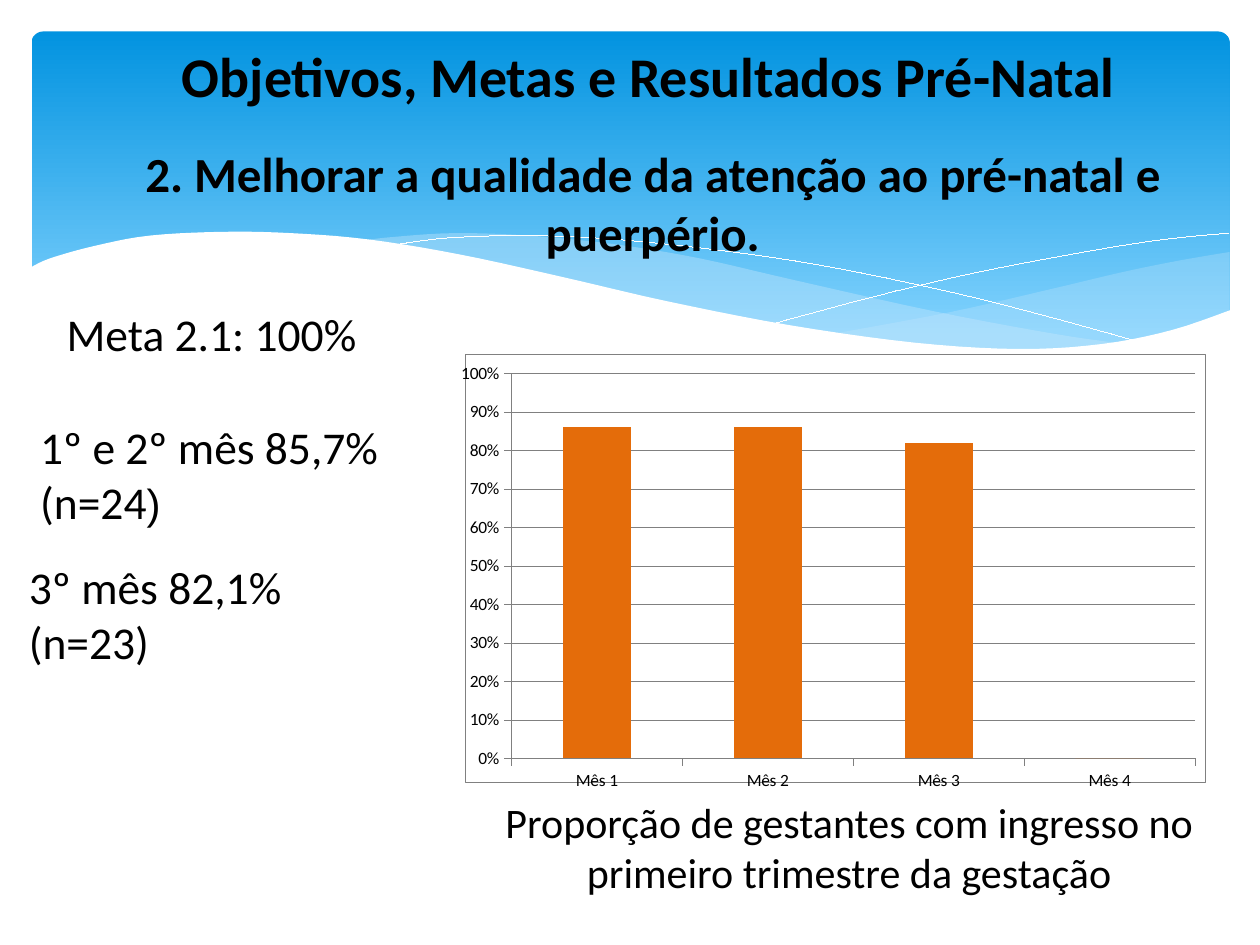
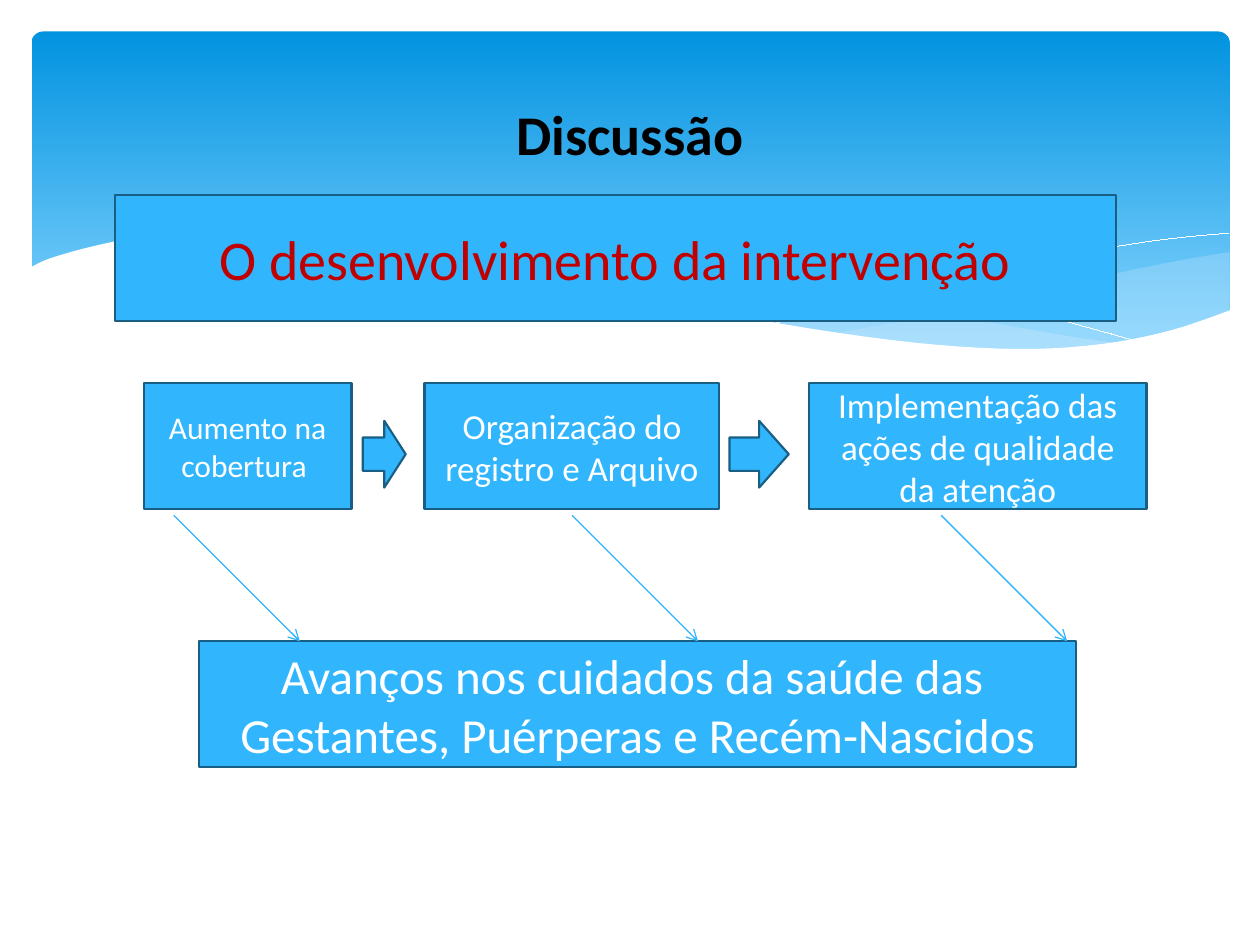
"""Build two slides on prenatal care results and their discussion."""
from dataclasses import dataclass

from lxml import etree
from pptx import Presentation
from pptx.chart.data import CategoryChartData
from pptx.dml.color import RGBColor as RGB
from pptx.enum.chart import XL_CHART_TYPE as CT, XL_TICK_MARK as TICK
from pptx.enum.shapes import MSO_CONNECTOR as CONN, MSO_SHAPE as SHAPE
from pptx.enum.text import MSO_ANCHOR as ANCHOR, MSO_AUTO_SIZE as AUTO, PP_ALIGN as ALIGN
from pptx.oxml import parse_xml
from pptx.oxml.ns import nsdecls, qn
from pptx.util import Inches, Pt


@dataclass(frozen=True)
class Theme:
    """Colours, fonts and type sizes of the deck."""
    font: str = "Calibri"
    alt_font: str = "Arial"
    black: str = "000000"
    white: str = "FFFFFF"
    red: str = "C00000"
    band_top: str = "0293E0"
    band_bottom: str = "83D3FE"
    wave: str = "C6E7FC"
    box: str = "31B6FD"
    box_line: str = "195F84"
    bar: str = "E46C0A"
    grid: str = "808080"
    title: int = 32
    subtitle: int = 28
    body: int = 26
    caption: int = 24
    step: int = 20
    small_step: int = 18
    axis: int = 10
    hairline: float = 0.01


T = Theme()

RIGHT_WAVE_TOP = [(9.76, 2), (9.35, 2.07), (8.91, 2.16), (8.32, 2.3), (7.53, 2.48), (6.61, 2.65)]
RIGHT_WAVE_BOTTOM = [(6.61, 2.65), (7.19, 2.72), (7.69, 2.77), (8.14, 2.78), (8.63, 2.75),
                     (9.05, 2.69), (9.42, 2.59), (9.76, 2.47)]
LONG_WAVE_TOP = [(8.93, 2.73), (8.37, 2.65), (7.41, 2.47), (6.29, 2.22), (5.55, 2.05),
                 (4.89, 1.94), (4.2, 1.87), (3.61, 1.85), (3.13, 1.88), (2.86, 1.91)]
LONG_WAVE_BOTTOM = [(2.86, 1.91), (3.62, 2.03), (4.49, 2.22), (5.3, 2.4), (6.18, 2.58),
                    (6.95, 2.7), (7.61, 2.77), (8.18, 2.78), (8.57, 2.77), (8.93, 2.73)]
FALLING_LINE = [(3.09, 1.95), (3.53, 1.89), (4.16, 1.87), (4.89, 1.9), (5.82, 2),
                (6.65, 2.13), (7.6, 2.33), (8.31, 2.51), (9.07, 2.72)]
RISING_LINE = [(6.13, 2.57), (6.95, 2.35), (7.76, 2.16), (8.66, 1.99), (9.24, 1.9), (9.75, 1.85)]
PAGE_EDGE = [(9.77, 2.46), (9.3, 2.62), (8.75, 2.73), (8.09, 2.77), (7.26, 2.72), (6.26, 2.58),
             (5.29, 2.39), (4.47, 2.2), (3.65, 2.02), (2.92, 1.9), (2.3, 1.85), (1.77, 1.84),
             (1.19, 1.87), (0.76, 1.95), (0.4, 2.05), (0.23, 2.13)]
PAGE_CORNERS = [(0.23, 3.29), (9.77, 3.29)]


def rgb(code):
    """Turn a hex code into a colour."""
    return RGB.from_string(code)


def inches(*values):
    """Convert several lengths to EMU."""
    return [Inches(v) for v in values]


def smooth(points, steps=5):
    """Return a Catmull-Rom curve through the points."""
    padded = [points[0], *points, points[-1]]
    curve = [points[0]]
    for a, b, c, d in zip(padded, padded[1:], padded[2:], padded[3:]):
        for i in range(1, steps + 1):
            t = i / steps
            curve.append(tuple(
                (2 * q + (r - p) * t + (2 * p - 5 * q + 4 * r - s) * t ** 2
                 + (3 * q - p - 3 * r + s) * t ** 3) / 2
                for p, q, r, s in zip(a, b, c, d)))
    return curve


def paint(s, fill=None, line=None, width=T.hairline):
    """Set the fill and line of a shape and drop its shadow."""
    s.shadow.inherit = False
    if fill:
        s.fill.solid()
        s.fill.fore_color.rgb = rgb(fill)
    else:
        s.fill.background()
    if line:
        s.line.color.rgb = rgb(line)
        s.line.width = Pt(width)
    else:
        s.line.fill.background()


def add_outline(slide, points, fill=None, line=None, opacity=100):
    """Draw a closed filled outline, or an open line when there is no fill."""
    pts = [inches(*p) for p in points]
    builder = slide.shapes.build_freeform(*pts[0])
    builder.add_line_segments(pts[1:], close=bool(fill))
    s = builder.convert_to_shape()
    paint(s, fill, line)
    if opacity < 100:
        clr = s.element.spPr.find(f"{qn('a:solidFill')}/{qn('a:srgbClr')}")
        etree.SubElement(clr, qn("a:alpha"), val=str(opacity * 1000))
    return s


def add_band(slide):
    """Draw the gradient band at the top of the page."""
    s = slide.shapes.add_shape(SHAPE.ROUNDED_RECTANGLE, *inches(0.25, 0.25, 9.51, 2.7))
    s.adjustments[0] = 0.034
    paint(s)
    s.fill.gradient()
    s.fill.gradient_angle = 270
    for stop, color, pos in zip(s.fill.gradient_stops, (T.band_top, T.band_bottom), (0, 0.9)):
        stop.color.rgb = rgb(color)
        stop.position = pos
    return s


def decorate_layout(layout, slide):
    """Put the band and its waves behind everything on the layout."""
    for ph in list(layout.placeholders)[1:]:
        layout.shapes.element.remove(ph.element)
    parts = [
        add_band(slide),
        add_outline(slide, smooth(RIGHT_WAVE_TOP) + smooth(RIGHT_WAVE_BOTTOM), T.wave, opacity=29),
        add_outline(slide, smooth(LONG_WAVE_TOP) + smooth(LONG_WAVE_BOTTOM), T.wave, opacity=40),
        add_outline(slide, smooth(FALLING_LINE), line=T.white),
        add_outline(slide, smooth(RISING_LINE), line=T.white),
        add_outline(slide, smooth(PAGE_EDGE) + PAGE_CORNERS, T.white),
    ]
    for i, s in enumerate(parts, start=2):
        layout.shapes.element.insert(i, s.element)


def format_run(r, size, color=T.black, bold=False, font=T.font):
    """Set the font of a run."""
    r.font.name = font
    r.font.size = Pt(size)
    r.font.bold = bold
    r.font.color.rgb = rgb(color)


def write(s, text, size, color=T.black, bold=False, align=ALIGN.CENTER, anchor=ANCHOR.MIDDLE):
    """Fill a shape with one formatted paragraph and return the paragraph."""
    tf = s.text_frame
    p = tf.paragraphs[0]
    p.text = text
    p.alignment = align
    tf.word_wrap = True
    tf.auto_size = AUTO.NONE
    tf.vertical_anchor = anchor
    for r in p.runs:
        format_run(r, size, color, bold)
    return p


def set_title(slide, text, size, box):
    """Place and fill the title placeholder."""
    s = slide.shapes.title
    s.left, s.top, s.width, s.height = inches(*box)
    write(s, text, size, bold=True)


def add_text(slide, text, size, box, **style):
    """Add a text box and return its paragraph."""
    return write(slide.shapes.add_textbox(*inches(*box)), text, size, **style)


def add_box(slide, text, size, box, color=T.white):
    """Add a blue box with centred text."""
    s = slide.shapes.add_shape(SHAPE.RECTANGLE, *inches(*box))
    paint(s, T.box, T.box_line, 1.25)
    write(s, text, size, color)


def add_block_arrow(slide, left, width):
    """Add a block arrow between two steps."""
    s = slide.shapes.add_shape(SHAPE.RIGHT_ARROW, *inches(left, 3.34, width, 0.53))
    paint(s, T.box, T.box_line, 1.25)


def add_diagonal_arrow(slide, x, y, reach=1):
    """Add a thin arrow going down to the right."""
    s = slide.shapes.add_connector(CONN.STRAIGHT, *inches(x, y, x + reach, y + reach))
    s.line.color.rgb = rgb(T.box)
    s.line.width = Pt(0.75)
    props = s.element.spPr
    etree.SubElement(props.find(qn("a:ln")), qn("a:tailEnd"), type="arrow")
    etree.SubElement(props, qn("a:effectLst"))


def area_format(line=None):
    """Return chart area properties: white fill and an optional border."""
    border = (f'<a:ln w="3175"><a:solidFill><a:srgbClr val="{line}"/></a:solidFill></a:ln>'
              if line else "<a:ln><a:noFill/></a:ln>")
    return parse_xml(f'<c:spPr {nsdecls("c", "a")}><a:solidFill><a:srgbClr val="{T.white}"/>'
                     f'</a:solidFill>{border}</c:spPr>')


def place_plot(plot_area, x, y, w, h):
    """Fix the inner plot area as fractions of the chart."""
    for old in plot_area.findall(qn("c:layout")):
        plot_area.remove(old)
    layout = etree.Element(qn("c:layout"))
    manual = etree.SubElement(layout, qn("c:manualLayout"))
    settings = {"layoutTarget": "inner", "xMode": "edge", "yMode": "edge",
                "x": x, "y": y, "w": w, "h": h}
    for name, value in settings.items():
        etree.SubElement(manual, qn(f"c:{name}"), val=str(value))
    plot_area.insert(0, layout)


def format_line(line):
    """Give a chart line the thin grey style."""
    line.color.rgb = rgb(T.grid)
    line.width = Pt(0.25)


def add_column_chart(slide, cats, vals, box):
    """Add the percentage column chart."""
    data = CategoryChartData(number_format="0%")
    data.categories = cats
    data.add_series("Series 1", vals)
    chart = slide.shapes.add_chart(CT.COLUMN_CLUSTERED, *inches(*box), data).chart
    chart.has_legend = chart.has_title = False
    chart.font.name = T.font
    chart.font.size = Pt(T.axis)
    chart.font.color.rgb = rgb(T.black)
    for axis in (chart.category_axis, chart.value_axis):
        axis.major_tick_mark = TICK.OUTSIDE
        axis.minor_tick_mark = TICK.NONE
        format_line(axis.format.line)
    axis = chart.value_axis
    axis.minimum_scale, axis.maximum_scale, axis.major_unit = 0, 1, 0.1
    axis.tick_labels.number_format = "0%"
    axis.tick_labels.number_format_is_linked = False
    format_line(axis.major_gridlines.format.line)
    plot = chart.plots[0]
    plot.gap_width = 150
    plot.vary_by_categories = False
    fill = plot.series[0].format.fill
    fill.solid()
    fill.fore_color.rgb = rgb(T.bar)
    root = chart.element
    plot_area = root.find(f"{qn('c:chart')}/{qn('c:plotArea')}")
    place_plot(plot_area, 0.062, 0.045, 0.924, 0.899)
    plot_area.append(area_format())
    root.find(qn("c:txPr")).addprevious(area_format(T.grid))


def build_results(slide):
    """Fill the slide with the goal, its results and the chart."""
    add_column_chart(slide, [f"Mês {n}" for n in range(1, 5)], (0.86, 0.86, 0.82, 0),
                     (3.66, 2.81, 5.91, 3.46))
    set_title(slide, "2. Melhorar a qualidade da atenção ao pré-natal e puerpério.",
              T.subtitle, (0.68, 0.92, 9, 1.37))
    add_text(slide, "Proporção de gestantes com ingresso no primeiro trimestre da gestação",
             T.caption, (3.47, 6.27, 6.54, 0.91), anchor=ANCHOR.TOP)
    add_text(slide, "Objetivos, Metas e Resultados Pré-Natal", T.title,
             (0.65, 0.21, 9, 0.78), bold=True)
    left = {"align": ALIGN.LEFT, "anchor": ANCHOR.TOP}
    add_text(slide, "Meta 2.1: 100%", T.body, (0.43, 2.38, 2.6, 0.54), **left)
    p = add_text(slide, "1º e 2º mês 85,7% (n=24", T.body, (0.22, 3.28, 3.03, 0.98), **left)
    r = p.add_run()
    r.text = ")"
    format_run(r, T.caption, font=T.alt_font)
    add_text(slide, "3º mês 82,1% (n=23)", T.body, (0.13, 4.39, 3.12, 0.98), **left)


def build_discussion(slide):
    """Fill the slide with the steps and the outcome they lead to."""
    set_title(slide, "Discussão", T.title, (0.5, 0.37, 9, 1.37))
    add_box(slide, "O desenvolvimento da intervenção", T.title, (0.91, 1.55, 7.95, 1), T.red)
    steps = [("Aumento na cobertura ", T.small_step, 1.14, 1.65),
             ("Organização do registro e Arquivo", T.step, 3.37, 2.34),
             ("Implementação das ações de qualidade da atenção", T.step, 6.42, 2.68)]
    for text, size, left, width in steps:
        add_box(slide, text, size, (left, 3.04, width, 1))
    for left, width in ((2.88, 0.34), (5.79, 0.47)):
        add_block_arrow(slide, left, width)
    add_box(slide, "Avanços nos cuidados da saúde das \vGestantes, Puérperas e Recém-Nascidos",
            T.subtitle, (1.58, 5.09, 6.96, 1))
    for x in (1.38, 4.54, 7.47):
        add_diagonal_arrow(slide, x, 4.09)


def main():
    """Build and save the presentation."""
    prs = Presentation()
    prs.slide_width, prs.slide_height = inches(10, 7.5)
    layout = prs.slide_layouts[5]
    results, discussion = (prs.slides.add_slide(layout) for _ in range(2))
    decorate_layout(layout, results)
    build_results(results)
    build_discussion(discussion)
    prs.save("out.pptx")


if __name__ == "__main__":
    main()
